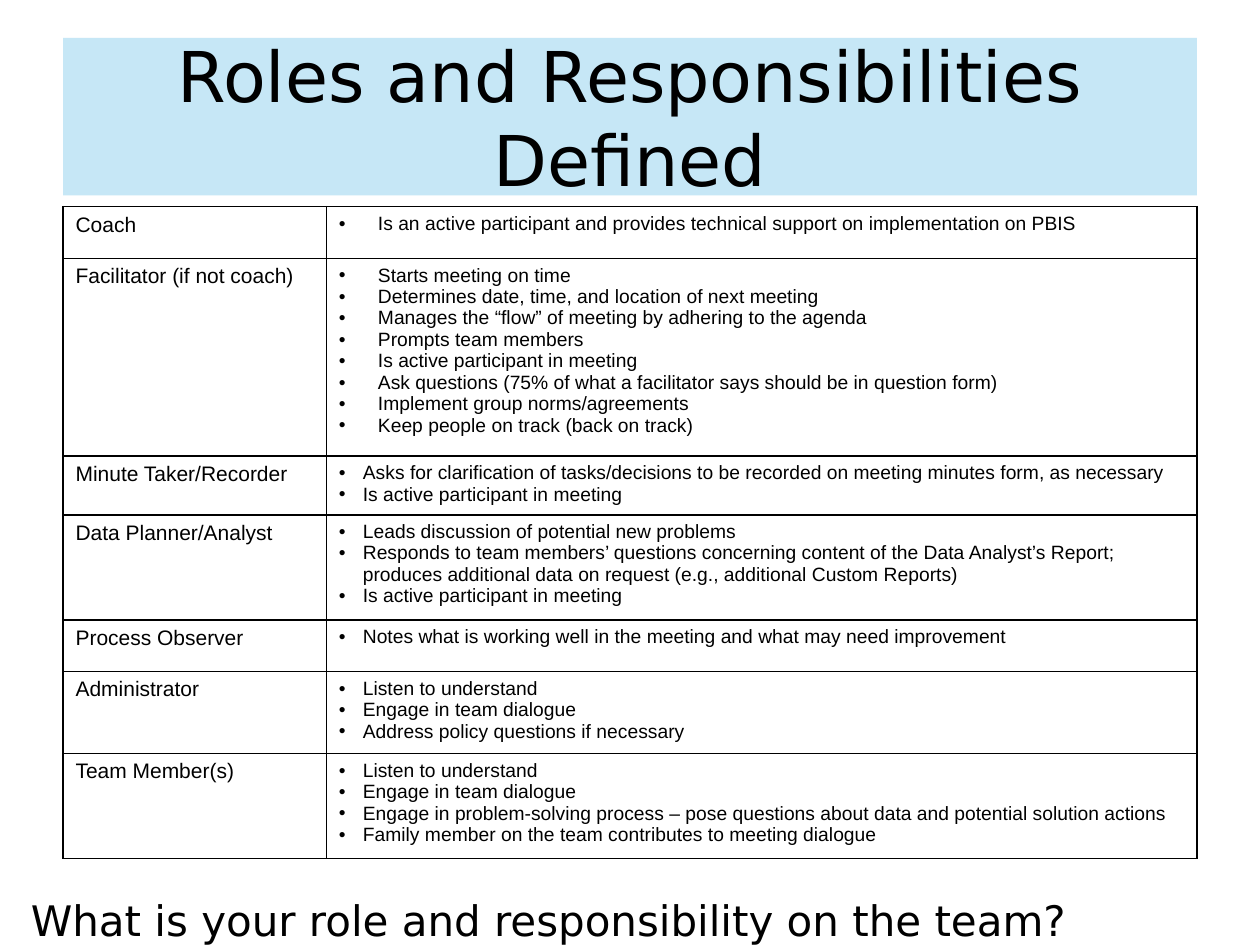
from lxml.etree import SubElement
from pptx import Presentation
from pptx.dml.color import RGBColor
from pptx.enum.text import MSO_ANCHOR, MSO_AUTO_SIZE, PP_ALIGN
from pptx.oxml.ns import qn
from pptx.util import Inches, Pt

BLACK = RGBColor(0x00, 0x00, 0x00)
SKY = RGBColor(0xA9, 0xDC, 0xF2)
HEAD, BODY = "DejaVu Sans", "Arial"
WIDE, NARROW = 0.31, 0.19

TITLE = "Roles and Responsibilities Defined"
ASK = "What is your role and responsibility on the team?"
ROLES = [
    ("Coach", WIDE, [
        "Is an active participant and provides technical support on implementation on PBIS"]),
    ("Facilitator (if not coach)", WIDE, [
        "Starts meeting on time",
        "Determines date, time, and location of next meeting",
        "Manages the “flow” of meeting by adhering to the agenda",
        "Prompts team members",
        "Is active participant in meeting",
        "Ask questions (75% of what a facilitator says should be in question form)",
        "Implement group norms/agreements",
        "Keep people on track (back on track)"]),
    ("Minute Taker/Recorder", NARROW, [
        "Asks for clarification of tasks/decisions to be recorded on meeting minutes form, "
        "as necessary",
        "Is active participant in meeting"]),
    ("Data Planner/Analyst", NARROW, [
        "Leads discussion of potential new problems",
        "Responds to team members’ questions concerning content of the Data Analyst’s Report; "
        "produces additional data on request (e.g., additional Custom Reports)",
        "Is active participant in meeting"]),
    ("Process Observer", NARROW, [
        "Notes what is working well in the meeting and what may need improvement"]),
    ("Administrator", NARROW, [
        "Listen to understand",
        "Engage in team dialogue",
        "Address policy questions if necessary"]),
    ("Team Member(s)", NARROW, [
        "Listen to understand",
        "Engage in team dialogue",
        "Engage in problem-solving process – pose questions about data and potential "
        "solution actions",
        "Family member on the team contributes to meeting dialogue"]),
]

MARGIN, WIDTH = Inches(0.5), Inches(9)
ROW = Inches(0.41)  # least height; rows grow with their text
COLS = [Inches(2.09), Inches(6.91)]


def style(frame, size, font, align=PP_ALIGN.LEFT):
    for para in frame.paragraphs:
        para.alignment = align
        for run in para.runs:
            run.font.size = Pt(size)
            run.font.name = font
            run.font.color.rgb = BLACK


def bullet(para, indent):
    props = para._p.get_or_add_pPr()
    props.set("marL", str(Inches(indent)))
    props.set("indent", str(-Inches(indent)))
    color = SubElement(props, qn("a:buClr"))
    SubElement(color, qn("a:srgbClr"), val=str(BLACK))
    SubElement(props, qn("a:buFont"), typeface=BODY)
    SubElement(props, qn("a:buChar"), char="•")


def border(cell):
    """Draw the four cell edges; they must precede the fill in the XML."""
    props = cell._tc.get_or_add_tcPr()
    for place, side in enumerate(("lnL", "lnR", "lnT", "lnB")):
        line = SubElement(props, qn(f"a:{side}"), w=str(Pt(1)))
        fill = SubElement(line, qn("a:solidFill"))
        SubElement(fill, qn("a:srgbClr"), val=str(BLACK))
        props.insert(place, line)


deck = Presentation()
deck.slide_width, deck.slide_height = Inches(10), Inches(7.5)
slide = deck.slides.add_slide(deck.slide_layouts[5])

ask = slide.shapes.add_textbox(Inches(-0.51), Inches(7.05), Inches(9.73), Inches(0.45))
ask.text_frame.word_wrap = True
ask.text_frame.text = ASK
style(ask.text_frame, 24, HEAD, PP_ALIGN.CENTER)

title = slide.shapes.title
title.left, title.top, title.width, title.height = MARGIN, Inches(0.3), WIDTH, Inches(1.25)
title.fill.solid()
title.fill.fore_color.rgb = SKY
tint = title.fill._xPr.find(qn("a:solidFill")).find(qn("a:srgbClr"))
SubElement(tint, qn("a:alpha"), val="66000")
title.text_frame.text = TITLE
title.text_frame.auto_size = MSO_AUTO_SIZE.NONE
title.text_frame.vertical_anchor = MSO_ANCHOR.MIDDLE
style(title.text_frame, 40, HEAD, PP_ALIGN.CENTER)

table = slide.shapes.add_table(
    len(ROLES), len(COLS), MARGIN, Inches(1.64), WIDTH, ROW * len(ROLES)).table
table.first_row = table.horz_banding = False
for col, width in zip(table.columns, COLS):
    col.width = width

for row, (role, indent, duties) in zip(table.rows, ROLES):
    name, tasks = row.cells
    name.text_frame.text = role
    tasks.text_frame.text = "\n".join(duties)
    style(name.text_frame, 12, BODY)
    style(tasks.text_frame, 11, BODY)
    for para in tasks.text_frame.paragraphs:
        bullet(para, indent)
    for cell in row.cells:
        cell.fill.background()
        border(cell)

deck.save("out.pptx")
